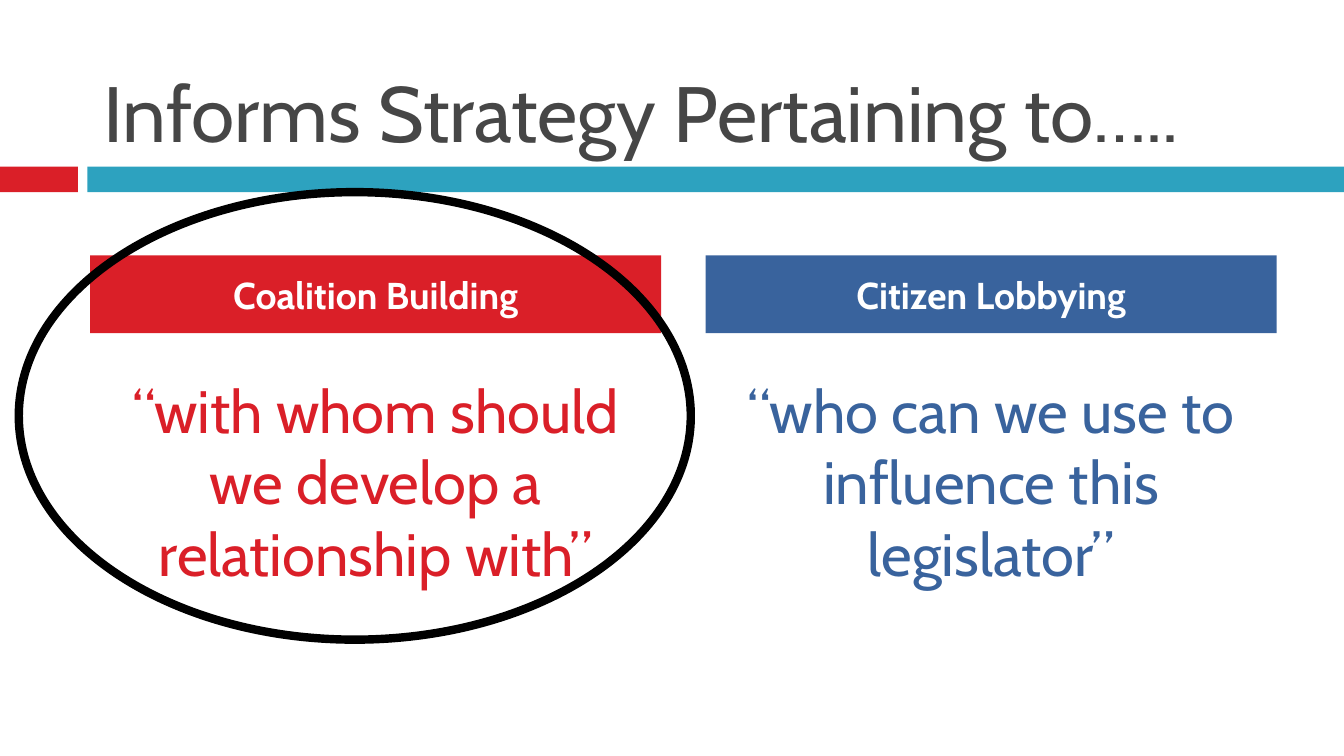
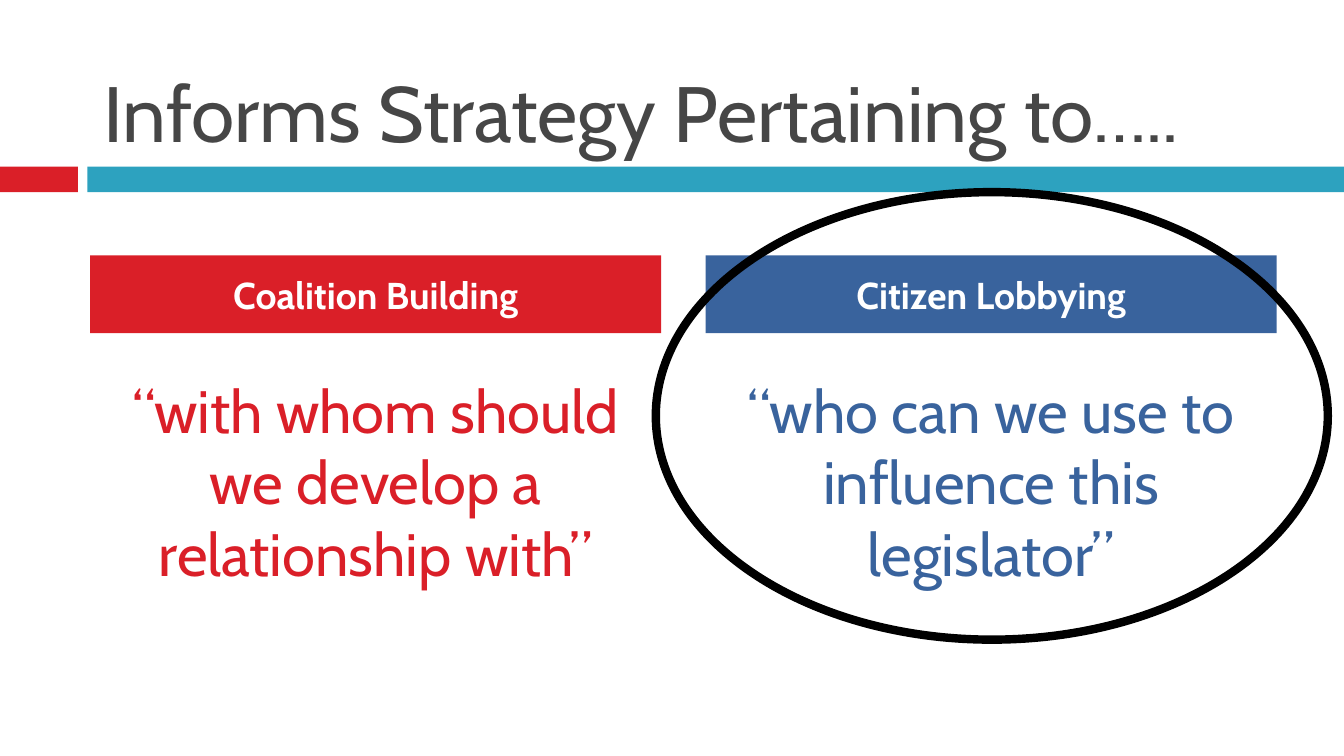
import dataclasses

import pptx
import pptx.dml.color
import pptx.enum.shapes
import pptx.enum.text
import pptx.util

SHAPE = pptx.enum.shapes.MSO_SHAPE
ANCHOR = pptx.enum.text.MSO_ANCHOR
ALIGN = pptx.enum.text.PP_ALIGN


@dataclasses.dataclass(frozen=True)
class Theme:
    font: str = "Cabin"
    red: str = "DA1F28"
    teal: str = "2DA2BF"
    blue: str = "39639D"
    grey: str = "464646"
    white: str = "FFFFFF"
    black: str = "000000"
    title_size: float = 42
    quote_size: float = 32
    heading_size: float = 20
    ring_width: float = 4.5


@dataclasses.dataclass(frozen=True)
class Box:
    left: int
    top: int
    width: int
    height: int

    def region(self, left, top, width, height):
        """Return a box given in percent of this one."""
        return Box(
            self.left + round(self.width * left / 100),
            self.top + round(self.height * top / 100),
            round(self.width * width / 100),
            round(self.height * height / 100),
        )

    def bounds(self):
        return self.left, self.top, self.width, self.height


THEME = Theme()
SLIDE_WIDTH = pptx.util.Inches(10)
PAGE = Box(0, 0, SLIDE_WIDTH, SLIDE_WIDTH * 9 // 16)

TITLE = "Informs Strategy Pertaining to….."
COLUMN_LEFT, COLUMN_WIDTH, COLUMN_GAP = 6.7, 42.5, 3.3
TOPICS = [
    ("Coalition Building", "“with whom should we develop a relationship with”", THEME.red),
    ("Citizen Lobbying", "“who can we use to influence this legislator”", THEME.blue),
]
RING_LEFTS = [1.4, 48.8]  # one slide for each circled topic


def rgb(value):
    return pptx.dml.color.RGBColor.from_string(value)


def write(shape, text, size, color, align, anchor, bold=False):
    frame = shape.text_frame
    frame.word_wrap = True
    frame.auto_size = pptx.enum.text.MSO_AUTO_SIZE.NONE
    frame.vertical_anchor = anchor
    frame.text = text
    paragraph = frame.paragraphs[0]
    paragraph.alignment = align
    font = paragraph.font
    font.name, font.size, font.bold = THEME.font, pptx.util.Pt(size), bold
    font.color.rgb = rgb(color)


def add_bar(slide, box, color):
    bar = slide.shapes.add_shape(SHAPE.RECTANGLE, *box.bounds())
    bar.shadow.inherit = False
    bar.fill.solid()
    bar.fill.fore_color.rgb = rgb(color)
    bar.line.fill.background()
    return bar


def add_header(slide, box):
    add_bar(slide, box.region(0, 86.7, 5.8, 13.3), THEME.red)
    add_bar(slide, box.region(6.5, 86.7, 93.5, 13.3), THEME.teal)
    title = slide.shapes.title
    title.left, title.top, title.width, title.height = box.region(6.7, 9.1, 89.2, 76.9).bounds()
    write(title, TITLE, THEME.title_size, THEME.grey, ALIGN.LEFT, ANCHOR.BOTTOM)


def add_topic(slide, box, heading, question, color):
    """Place a coloured heading with its question below."""
    quote = slide.shapes.add_textbox(*box.region(0, 6.5, 100, 93.5).bounds())
    write(quote, question, THEME.quote_size, color, ALIGN.CENTER, ANCHOR.TOP)
    quote.text_frame.margin_top = round(box.height * 0.22)
    bar = add_bar(slide, box.region(0, 0, 100, 18.83), color)
    write(bar, heading, THEME.heading_size, THEME.white, ALIGN.CENTER, ANCHOR.MIDDLE, bold=True)


def add_ring(slide, box):
    ring = slide.shapes.add_shape(SHAPE.OVAL, *box.bounds())
    ring.shadow.inherit = False
    ring.fill.background()
    ring.line.color.rgb = rgb(THEME.black)
    ring.line.width = pptx.util.Pt(THEME.ring_width)


def add_topics_slide(deck, ring_left):
    slide = deck.slides.add_slide(deck.slide_layouts.get_by_name("Title Only"))
    add_header(slide, PAGE.region(0, 0, 100, 25.42))
    for index, topic in enumerate(TOPICS):
        left = COLUMN_LEFT + index * (COLUMN_WIDTH + COLUMN_GAP)
        add_topic(slide, PAGE.region(left, 33.78, COLUMN_WIDTH, 54.76), *topic)
    add_ring(slide, PAGE.region(ring_left, 25.42, 50, 59.2))


def main():
    deck = pptx.Presentation()
    deck.slide_width, deck.slide_height = PAGE.width, PAGE.height
    for ring_left in RING_LEFTS:
        add_topics_slide(deck, ring_left)
    deck.save("out.pptx")


if __name__ == "__main__":
    main()
